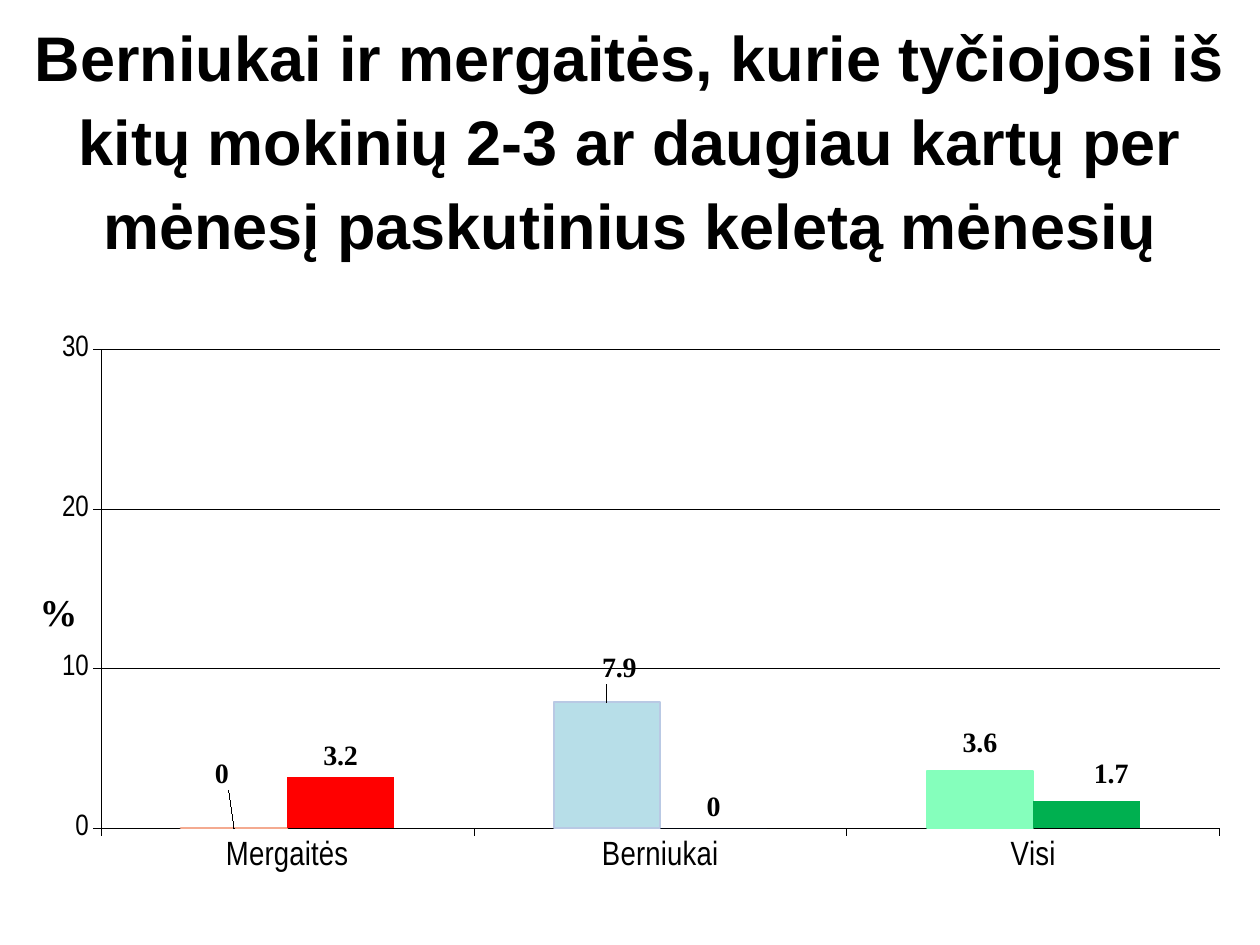
from lxml.etree import SubElement
from pptx import Presentation
from pptx.chart.data import CategoryChartData
from pptx.dml.color import RGBColor
from pptx.enum.chart import XL_CHART_TYPE, XL_LABEL_POSITION, XL_TICK_LABEL_POSITION, XL_TICK_MARK
from pptx.enum.text import MSO_ANCHOR, PP_ALIGN
from pptx.oxml.ns import qn
from pptx.util import Pt

# Content
TITLE = ("Berniukai ir mergaitės, kurie tyčiojosi iš kitų mokinių 2-3 ar daugiau "
         "kartų per mėnesį paskutinius keletą mėnesių")
CATEGORIES = ["Mergaitės", "Berniukai", "Visi"]
# Label shifts are fractions of the chart's width and height
SERIES = [
    {"name": "Series 1", "values": [0, 7.9, 3.6],
     "fills": ["F4AA90", "B7DEE8", "85FFBC"], "lines": ["F4AA90", "B9C9E4", "85FFBC"],
     "shifts": {0: (-0.01, -0.05), 1: (0.01, -0.02), 2: (0, -0.01)}},
    {"name": "Series 2", "values": [3.2, 0, 1.7],
     "fills": ["FF0000", "002060", "00B050"], "lines": None,
     "shifts": {2: (0.02, -0.01)}},
]
PLOT_AREA = {"layoutTarget": "inner", "xMode": "edge", "yMode": "edge",
             "x": 0.075, "y": 0.149, "w": 0.903, "h": 0.726}
UNIT_PLACE = {"xMode": "edge", "yMode": "edge", "x": 0.02, "y": 0.5}
TITLE_BOX = (0, 88, 1260, 96)
CHART_BOX = (8, 251, 1239, 660)


def px(length):
    return round(length * 914400 / 126)


def color(hex_code):
    return RGBColor.from_string(hex_code)


def style_font(font, size, name, bold=False):
    font.size, font.name, font.bold = Pt(size), name, bold
    font.color.rgb = color("000000")


def style_line(line, hex_code, width):
    line.color.rgb = color(hex_code)
    line.width = Pt(width)


def set_layout(parent, index, settings):
    for old in parent.findall(qn("c:layout")):
        parent.remove(old)
    layout = SubElement(parent, qn("c:layout"))
    parent.insert(index, layout)
    manual = SubElement(layout, qn("c:manualLayout"))
    for tag, value in settings.items():
        SubElement(manual, qn("c:" + tag)).set("val", str(value))


deck = Presentation()
deck.slide_width, deck.slide_height = px(1260), px(945)
slide = deck.slides.add_slide(deck.slide_layouts[5])

# Title
heading = slide.shapes.title
heading.left, heading.top, heading.width, heading.height = map(px, TITLE_BOX)
heading.text_frame.vertical_anchor = MSO_ANCHOR.MIDDLE
heading_line = heading.text_frame.paragraphs[0]
heading_line.alignment = PP_ALIGN.CENTER
heading_line.line_spacing = Pt(48)
heading_run = heading_line.add_run()
heading_run.text = TITLE
style_font(heading_run.font, 36, "Arial", True)

# Column chart
percentages = CategoryChartData()
percentages.categories = CATEGORIES
for group in SERIES:
    percentages.add_series(group["name"], group["values"])
chart = slide.shapes.add_chart(XL_CHART_TYPE.COLUMN_CLUSTERED, *map(px, CHART_BOX), percentages).chart
chart.has_title = chart.has_legend = False
style_font(chart.font, 21.6, "Times New Roman", True)
plot = chart.plots[0]
plot.gap_width, plot.overlap, plot.vary_by_categories = 150, 0, False
chart_xml = chart.element
set_layout(chart_xml.xpath(".//c:plotArea")[0], 0, PLOT_AREA)

# Axes
for axis, size in ((chart.category_axis, 19.2), (chart.value_axis, 16.8)):
    axis.major_tick_mark = XL_TICK_MARK.OUTSIDE
    axis.minor_tick_mark = XL_TICK_MARK.NONE
    style_font(axis.tick_labels.font, size, "Arial Narrow")
    style_line(axis.format.line, "000000", 0.3)
chart.category_axis.tick_label_position = XL_TICK_LABEL_POSITION.LOW
percent_axis = chart.value_axis
percent_axis.minimum_scale, percent_axis.maximum_scale, percent_axis.major_unit = 0, 30, 10
percent_axis.has_major_gridlines = True
style_line(percent_axis.major_gridlines.format.line, "000000", 0.3)

# Unit beside the value axis
unit_run = percent_axis.axis_title.text_frame.paragraphs[0].add_run()
unit_run.text = "%"
style_font(unit_run.font, 21.6, "Times New Roman", True)
unit_xml = chart_xml.xpath(".//c:valAx/c:title")[0]
set_layout(unit_xml, 1, UNIT_PLACE)
unit_body = unit_xml.xpath(".//a:bodyPr")[0]
unit_body.set("rot", "0")
unit_body.set("vert", "horz")

# Columns and their values
for group, columns, columns_xml in zip(SERIES, plot.series, chart_xml.xpath(".//c:ser")):
    columns.invert_if_negative = False
    for index, fill in enumerate(group["fills"]):
        look = columns.points[index].format
        look.fill.solid()
        look.fill.fore_color.rgb = color(fill)
        if group["lines"]:
            style_line(look.line, group["lines"][index], 1.2)
        else:
            look.line.fill.background()
    values = columns.data_labels
    values.show_value = True
    values.position = XL_LABEL_POSITION.OUTSIDE_END
    style_font(values.font, 16, "Times New Roman", True)
    for index in group["shifts"]:
        value = columns.points[index].data_label
        style_font(value.font, 16, "Times New Roman", True)
        value.position = XL_LABEL_POSITION.OUTSIDE_END
    for value_xml, (x, y) in zip(columns_xml.xpath("./c:dLbls/c:dLbl"), group["shifts"].values()):
        set_layout(value_xml, 1, {"x": x, "y": y})

deck.save("out.pptx")
